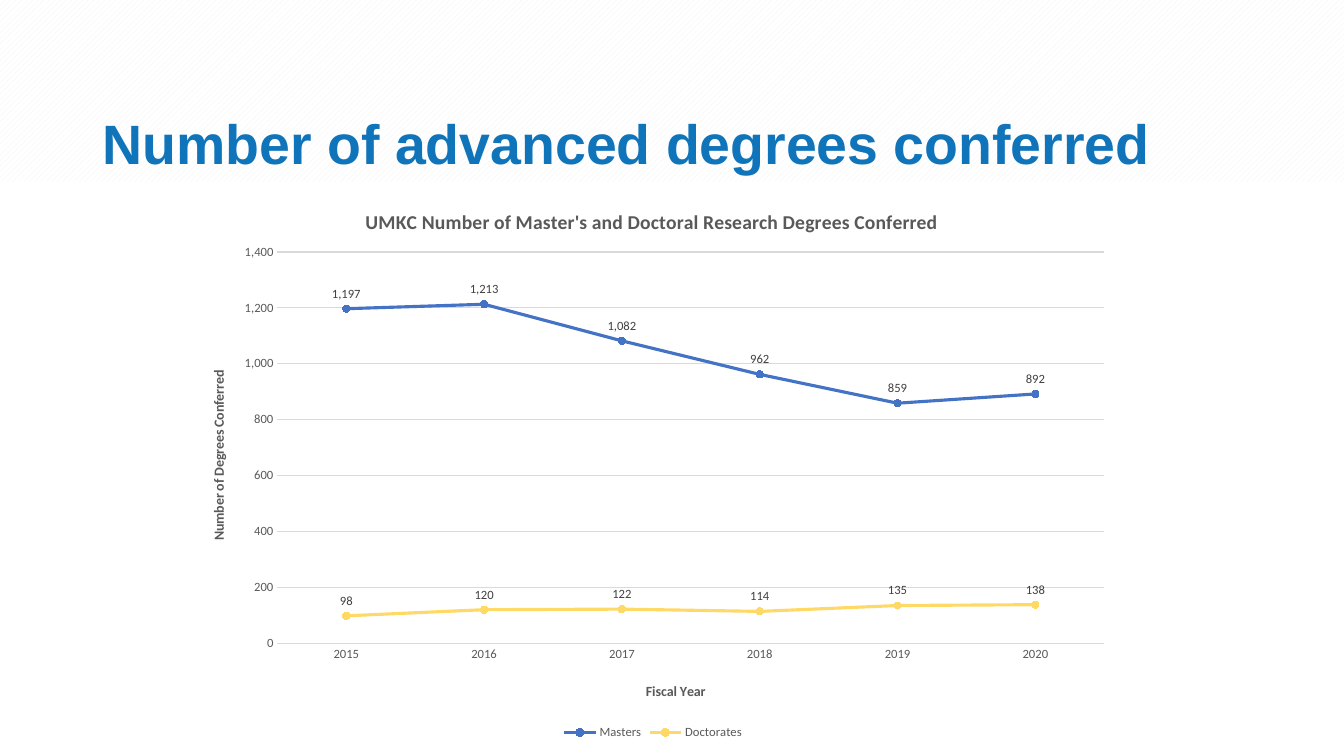
from lxml import etree
from pptx import Presentation
from pptx.chart.data import CategoryChartData
from pptx.dml.color import RGBColor
from pptx.enum.chart import (XL_CHART_TYPE, XL_LABEL_POSITION,
                             XL_LEGEND_POSITION, XL_MARKER_STYLE, XL_TICK_MARK)
from pptx.enum.dml import MSO_PATTERN
from pptx.enum.shapes import MSO_SHAPE
from pptx.enum.text import MSO_ANCHOR
from pptx.oxml.ns import qn
from pptx.util import Inches, Pt

LINE = XL_CHART_TYPE.LINE_MARKERS
ABOVE = XL_LABEL_POSITION.ABOVE
BOTTOM = XL_LEGEND_POSITION.BOTTOM
CIRCLE = XL_MARKER_STYLE.CIRCLE
NONE = XL_TICK_MARK.NONE
STRIPES = MSO_PATTERN.WIDE_UPWARD_DIAGONAL
RECT = MSO_SHAPE.RECTANGLE
LOW = MSO_ANCHOR.BOTTOM

WHITE = RGBColor(0xFF, 0xFF, 0xFF)
PALE = RGBColor(0xF2, 0xF2, 0xF2)
TITLE = RGBColor(0x10, 0x74, 0xBA)
GRID = RGBColor(0xD9, 0xD9, 0xD9)
GREY = RGBColor(0x59, 0x59, 0x59)
DARK = RGBColor(0x40, 0x40, 0x40)
BLUE = RGBColor(0x44, 0x72, 0xC4)
GOLD = RGBColor(0xFF, 0xD9, 0x66)

YEARS = ["2015", "2016", "2017", "2018", "2019", "2020"]
DEGREES = [
    ("Masters", BLUE, (1197, 1213, 1082, 962, 859, 892)),
    ("Doctorates", GOLD, (98, 120, 122, 114, 135, 138)),
]


def style(font, size, color, bold=False, name="Calibri"):
    """Set the look of a font."""
    font.name = name
    font.size = Pt(size)
    font.bold = bold
    font.color.rgb = color


def place(node, index, **parts):
    """Give a chart element a manual layout in fractions of the chart."""
    for old in node.findall(qn("c:layout")):
        node.remove(old)
    layout = etree.Element(qn("c:layout"))
    manual = etree.SubElement(layout, qn("c:manualLayout"))
    for key, value in parts.items():
        etree.SubElement(manual, qn("c:" + key)).set("val", str(value))
    node.insert(index, layout)


def caption(owner, title, text, size, x, y):
    """Write a chart or axis title and set its top left corner."""
    owner.has_title = True
    frame = title.text_frame
    frame.text = text
    style(frame.paragraphs[0].runs[0].font, size, GREY, True)
    place(frame._txBody.getparent().getparent(), 1,
          xMode="edge", yMode="edge", x=x, y=y)


def add_band(slide, left, top, width, height):
    """Draw the striped band behind the heading."""
    band = slide.shapes.add_shape(RECT, left, top, width, height)
    band.shadow.inherit = False
    band.fill.patterned()
    band.fill.pattern = STRIPES
    band.fill.fore_color.rgb = PALE
    band.fill.back_color.rgb = WHITE
    band.line.fill.background()


def add_heading(slide, left, top, width, height):
    """Write the slide heading at the foot of its box."""
    frame = slide.shapes.add_textbox(left, top, width, height).text_frame
    frame.word_wrap = True
    frame.vertical_anchor = LOW
    frame.text = "Number of advanced degrees conferred"
    line = frame.paragraphs[0]
    line.line_spacing = 0.9
    style(line.runs[0].font, 39.6, TITLE, True, "Arial")


def add_lines(slide, left, top, width, height):
    """Draw the line chart of degrees by year."""
    data = CategoryChartData(number_format="#,##0")
    data.categories = YEARS
    for name, _, values in DEGREES:
        data.add_series(name, values)
    chart = slide.shapes.add_chart(LINE, left, top, width, height, data).chart
    style(chart.font, 10, GREY)
    caption(chart, chart.chart_title,
            "UMKC Number of Master's and Doctoral Research Degrees Conferred",
            14, 0.19, 0.04)
    place(chart._chartSpace.chart.plotArea, 0, layoutTarget="inner",
          xMode="edge", yMode="edge", x=0.1, y=0.124, w=0.881, h=0.697)

    years, count = chart.category_axis, chart.value_axis
    caption(years, years.axis_title, "Fiscal Year", 10, 0.49, 0.885)
    caption(count, count.axis_title, "Number of Degrees Conferred",
            10, 0.025, 0.33)
    for axis in (years, count):
        axis.major_tick_mark = axis.minor_tick_mark = NONE
        style(axis.tick_labels.font, 9, GREY)
    years.format.line.color.rgb = GRID
    years.format.line.width = Pt(0.75)
    count.format.line.fill.background()
    count.minimum_scale, count.maximum_scale = 0, 1400
    count.major_unit = 200
    count.tick_labels.number_format = "#,##0"
    count.tick_labels.number_format_is_linked = False
    rules = count.major_gridlines.format.line
    rules.color.rgb = GRID
    rules.width = Pt(0.75)

    chart.has_legend = True
    chart.legend.position = BOTTOM
    chart.legend.include_in_layout = False
    style(chart.legend.font, 9, GREY)

    plot = chart.plots[0]
    plot.vary_by_categories = False
    for series, (_, color, _) in zip(plot.series, DEGREES):
        series.smooth = False
        series.format.line.color.rgb = color
        series.format.line.width = Pt(2.25)
        marker = series.marker
        marker.style = CIRCLE
        marker.size = 5
        marker.format.fill.solid()
        marker.format.fill.fore_color.rgb = color
        marker.format.line.color.rgb = color
        labels = series.data_labels
        labels.show_value = True
        labels.position = ABOVE
        labels.number_format = "#,##0"
        labels.number_format_is_linked = False
        style(labels.font, 9, DARK)


def main():
    """Build the slide and save it."""
    deck = Presentation()
    deck.slide_width = Inches(13.33)
    deck.slide_height = Inches(7.5)
    slide = deck.slides.add_slide(deck.slide_layouts[6])
    add_band(slide, 0, 0, deck.slide_width, Inches(1.8))
    add_lines(slide, Inches(1.82), Inches(1.81), Inches(9.31), Inches(5.57))
    add_heading(slide, Inches(0.92), Inches(0.4), Inches(11.5), Inches(1.4))
    deck.save("out.pptx")


if __name__ == "__main__":
    main()
